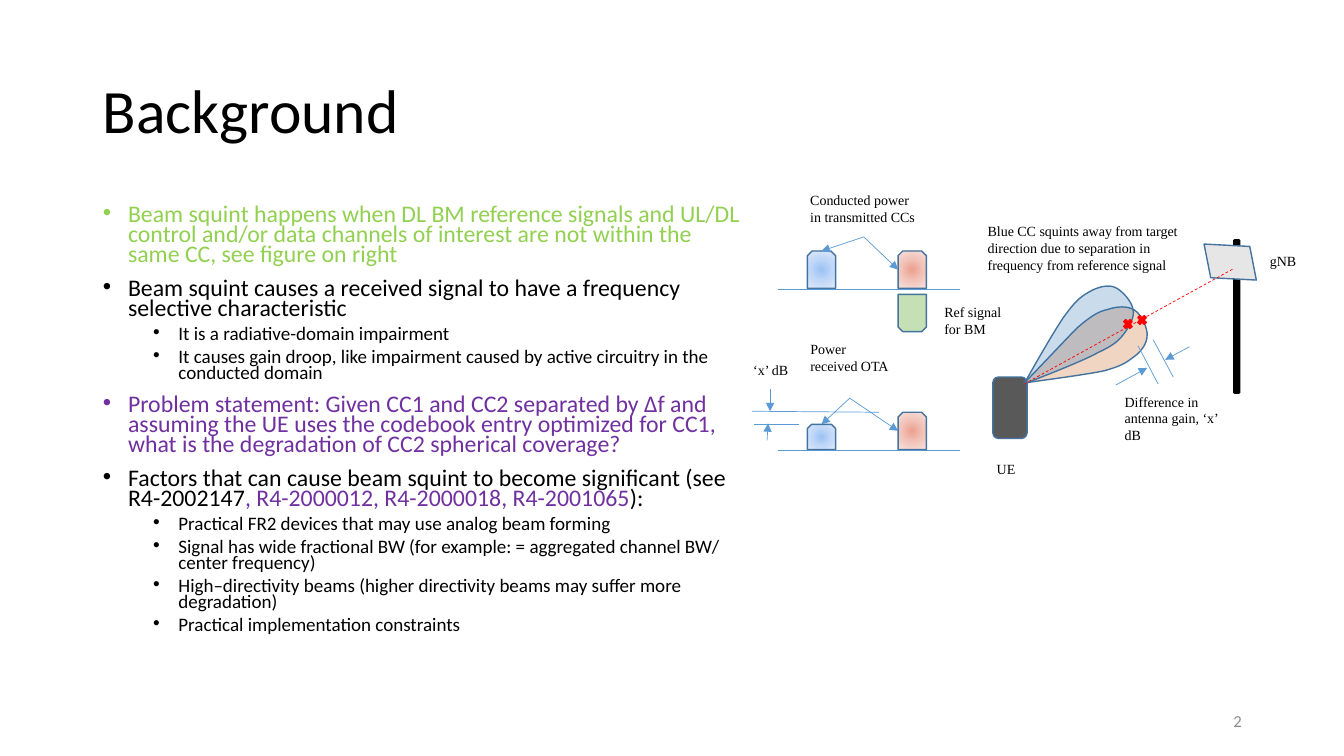
from dataclasses import dataclass

from pptx import Presentation
from pptx import util as u
from pptx.dml.color import RGBColor
from pptx.enum import dml, shapes, text
from pptx.oxml import parse_xml
from pptx.oxml.ns import nsdecls
from pptx.oxml.xmlchemy import OxmlElement

SHAPE = shapes.MSO_SHAPE


@dataclass(frozen=True)
class Theme:
    sans: str = "Calibri"
    serif: str = "Times New Roman"
    black: str = "000000"
    white: str = "FFFFFF"
    grey: str = "8C8C8C"
    green: str = "92D050"
    purple: str = "7030A0"
    red: str = "FF0000"
    outline: str = "43739E"
    guide: str = "5B9BD5"
    device: str = "595959"
    panel: str = "E7E6E6"
    reference: str = "C5E0B4"
    orange_lobe: str = "C55A11"
    blue_lobe: str = "2E75B6"
    blue_carrier: tuple = ("9AC3F5", "C2D8F8", "E1EBFB")
    red_carrier: tuple = ("EDA08E", "F2C5BB", "F8E3DE")
    title_size: float = 44
    body_size: float = 17
    sub_size: float = 13.6
    number_size: float = 12
    label_size: float = 10


THEME = Theme()


def assign(target, values):
    for name, value in values.items():
        setattr(target, name, value)


def add_run(paragraph, words, font, size, color):
    run = paragraph.add_run()
    run.text = words
    assign(run.font, {"name": font, "size": u.Pt(size)})
    run.font.color.rgb = RGBColor.from_string(color)


class SlideBuilder:
    """Draws themed elements on one slide."""

    def __init__(self, slide, theme):
        self.slide, self.theme = slide, theme

    def place(self, shape, box):
        assign(shape, dict(zip(("left", "top", "width", "height"), map(u.Inches, box))))

    def paint(self, shape, fill, line, alpha=None):
        shape.shadow.inherit = False
        if isinstance(fill, tuple):
            stops = "".join(f'<a:gs pos="{50000 * i}"><a:srgbClr val="{color}"/></a:gs>'
                            for i, color in enumerate(fill))
            gradient = parse_xml(
                f'<a:gradFill {nsdecls("a")} rotWithShape="1"><a:gsLst>{stops}</a:gsLst>'
                '<a:path path="circle"><a:fillToRect l="50000" t="50000" r="50000" b="50000"/>'
                '</a:path></a:gradFill>')
            shape._element.spPr.find("{*}prstGeom").addnext(gradient)
        else:
            shape.fill.solid()
            shape.fill.fore_color.rgb = RGBColor.from_string(fill)
        if alpha:
            opacity = OxmlElement("a:alpha")
            opacity.set("val", str(alpha * 1000))
            shape._element.spPr.find("{*}solidFill")[0].append(opacity)
        shape.line.color.rgb = RGBColor.from_string(line)
        shape.line.width = u.Pt(1)

    def title(self, words, box):
        shape = self.slide.shapes.title
        self.place(shape, box)
        assign(shape.text_frame, {"vertical_anchor": text.MSO_ANCHOR.MIDDLE, "word_wrap": True,
                                  "auto_size": text.MSO_AUTO_SIZE.NONE})
        paragraph = shape.text_frame.paragraphs[0]
        assign(paragraph, {"alignment": text.PP_ALIGN.LEFT, "line_spacing": 0.9})
        add_run(paragraph, words, self.theme.sans, self.theme.title_size, self.theme.black)

    def bullets(self, items, box):
        shape = self.slide.placeholders[1]
        self.place(shape, box)
        frame = shape.text_frame
        assign(frame, {"word_wrap": True, "auto_size": text.MSO_AUTO_SIZE.NONE})
        for index, (level, runs) in enumerate(items):
            paragraph = frame.add_paragraph() if index else frame.paragraphs[0]
            assign(paragraph, {"level": level, "line_spacing": 0.7, "space_after": u.Pt(0),
                               "space_before": u.Pt(5 if level else 10)})
            properties = paragraph._p.get_or_add_pPr()
            properties.set("marL", str(u.Inches(0.25 + 0.5 * level)))
            properties.set("indent", str(u.Inches(-0.25)))
            for tag, name, value in (("a:buFont", "typeface", "Arial"), ("a:buChar", "char", "•")):
                bullet = OxmlElement(tag)
                bullet.set(name, value)
                properties.append(bullet)
            size = self.theme.sub_size if level else self.theme.body_size
            for words, color in runs:
                add_run(paragraph, words, self.theme.sans, size, color)

    def text_box(self, words, box, font, size, color, frame_format, paragraph_format):
        shape = self.slide.shapes.add_textbox(*map(u.Inches, box))
        assign(shape.text_frame, {"word_wrap": True, **frame_format})
        paragraph = shape.text_frame.paragraphs[0]
        assign(paragraph, paragraph_format)
        add_run(paragraph, words, font, size, color)
        return shape

    def label(self, words, *box):
        shape = self.text_box(words, box, self.theme.serif, self.theme.label_size,
                              self.theme.black, {}, {"space_after": u.Pt(9)})
        shape.fill.solid()
        shape.fill.fore_color.rgb = RGBColor.from_string(self.theme.white)

    def page_number(self, words, box):
        self.text_box(words, box, self.theme.sans, self.theme.number_size, self.theme.grey,
                      {"vertical_anchor": text.MSO_ANCHOR.MIDDLE},
                      {"alignment": text.PP_ALIGN.RIGHT})

    def shape(self, kind, box, fill, line=None, rotation=0):
        shape = self.slide.shapes.add_shape(kind, *map(u.Inches, box))
        shape.rotation = rotation
        self.paint(shape, fill, line or self.theme.outline)

    def lobe(self, start, curves, fill):
        anchors = [start] + [curve[-1] for curve in curves]
        origin = [min(values) for values in zip(*anchors)]
        builder = self.slide.shapes.build_freeform(
            *(round(value * 1000) for value in start), scale=u.Inches(1) / 1000)
        builder.add_line_segments([(round(x * 1000), round(y * 1000)) for x, y in anchors[1:]])
        shape = builder.convert_to_shape()
        segments = list(shape._element.spPr.iter("{*}lnTo"))
        for segment, curve in zip(segments, curves):
            bend = OxmlElement("a:cubicBezTo")
            for point in curve:
                node = OxmlElement("a:pt")
                for name, value, least in zip("xy", point, origin):
                    node.set(name, str(round((value - least) * 1000)))
                bend.append(node)
            segment.getparent().replace(segment, bend)
        self.paint(shape, fill, self.theme.outline, alpha=25)

    def line(self, start, end, color=None, arrow=False, dash=None):
        line = self.slide.shapes.add_connector(shapes.MSO_CONNECTOR.STRAIGHT,
                                               *map(u.Inches, start + end))
        line.line.color.rgb = RGBColor.from_string(color or self.theme.guide)
        assign(line.line, {"width": u.Pt(0.5), "dash_style": dash})
        if arrow:
            head = OxmlElement("a:tailEnd")
            head.set("type", "triangle")
            line.line._get_or_add_ln().append(head)
        line._element.spPr.append(OxmlElement("a:effectLst"))


def draw_beams(builder):
    theme = builder.theme
    builder.shape(SHAPE.ROUNDED_RECTANGLE, (12.24, 2.38, 0.06, 1.52), theme.black, theme.black)
    builder.shape(SHAPE.PARALLELOGRAM, (11.98, 2.38, 0.45, 0.44), theme.panel, rotation=258.9)
    builder.shape(SHAPE.ROUNDED_RECTANGLE, (9.85, 3.74, 0.34, 0.61), theme.device)
    builder.lobe((10.16, 3.8), [
        ((10.32, 3.64), (10.56, 3.38), (10.69, 3.25)), ((10.83, 3.13), (10.9, 3.09), (10.99, 3.07)),
        ((11.08, 3.04), (11.19, 3.03), (11.26, 3.08)), ((11.32, 3.12), (11.39, 3.26), (11.38, 3.33)),
        ((11.38, 3.41), (11.32, 3.49), (11.25, 3.54)), ((11.17, 3.6), (11.13, 3.63), (10.95, 3.68)),
        ((10.76, 3.72), (10.29, 3.78), (10.16, 3.8))], theme.orange_lobe)
    builder.lobe((10.16, 3.81), [
        ((10.27, 3.61), (10.45, 3.3), (10.55, 3.15)), ((10.66, 3), (10.71, 2.95), (10.8, 2.9)),
        ((10.88, 2.85), (10.99, 2.82), (11.06, 2.85)), ((11.13, 2.88), (11.23, 2.99), (11.24, 3.07)),
        ((11.26, 3.14), (11.21, 3.23), (11.16, 3.3)), ((11.1, 3.38), (11.06, 3.42), (10.89, 3.5)),
        ((10.73, 3.59), (10.28, 3.76), (10.16, 3.81))], theme.blue_lobe)
    builder.line((10.16, 3.81), (12.23, 2.67), theme.red, dash=dml.MSO_LINE.DASH)
    for left, top in ((11.27, 3.11), (11.13, 3.15)):
        builder.shape(SHAPE.MATH_MULTIPLY, (left, top, 0.12, 0.13), theme.red, theme.red)
    builder.line((11.44, 3.37), (11.64, 3.74))
    builder.line((11.29, 3.43), (11.49, 3.81))
    builder.line((11.07, 3.82), (11.38, 3.65), arrow=True)
    builder.line((11.8, 3.44), (11.56, 3.57), arrow=True)
    builder.label("Difference in antenna gain, ‘x’ dB", 11.06, 3.85, 1.13, 0.59)
    builder.label("gNB", 12.5, 2.46, 0.57, 0.48)
    builder.label("UE", 9.79, 4.52, 0.57, 0.32)


def draw_carriers(builder, baseline, blue_height, apex):
    theme, bottom, red_height = builder.theme, baseline - 0.01, 0.37
    builder.line((7.72, baseline), (9.52, baseline))
    for left, height, fill in ((8.01, blue_height, theme.blue_carrier),
                               (8.91, red_height, theme.red_carrier)):
        builder.shape(SHAPE.SNIP_2_SAME_RECTANGLE, (left, bottom - height, 0.28, height), fill)
    builder.line(apex, (8.15, bottom - blue_height), arrow=True)
    builder.line(apex, (8.91, bottom - red_height / 2), arrow=True)


def main():
    presentation = Presentation()
    assign(presentation, {"slide_width": u.Inches(40 / 3), "slide_height": u.Inches(7.5)})
    slide = presentation.slides.add_slide(presentation.slide_layouts[1])
    builder, theme = SlideBuilder(slide, THEME), THEME
    builder.title("Background", (0.92, 0.4, 11.5, 1.45))
    builder.bullets([
        (0, [("Beam squint happens when DL BM reference signals and UL/DL control and/or data "
              "channels of interest are not within the same CC, see figure on right", theme.green)]),
        (0, [("Beam squint causes a received signal to have a frequency selective characteristic",
              theme.black)]),
        (1, [("It is a radiative-domain impairment", theme.black)]),
        (1, [("It causes gain droop, like impairment caused by active circuitry in the conducted "
              "domain", theme.black)]),
        (0, [("Problem statement: Given CC1 and CC2 separated by ∆f and assuming the UE uses the "
              "codebook entry optimized for CC1, what is the degradation of CC2 spherical "
              "coverage?", theme.purple)]),
        (0, [("Factors that can cause beam squint to become significant (see R4-2002147",
              theme.black), (", R4-2000012, R4-2000018, R4-2001065", theme.purple),
             ("):", theme.black)]),
        (1, [("Practical FR2 devices that may use analog beam forming", theme.black)]),
        (1, [("Signal has wide fractional BW (for example: = aggregated channel BW/ center "
              "frequency)", theme.black)]),
        (1, [("High–directivity beams (higher directivity beams may suffer more degradation)",
              theme.black)]),
        (1, [("Practical implementation constraints", theme.black)]),
    ], (0.92, 2, 6.54, 4.76))
    builder.page_number("2", (9.42, 6.95, 3, 0.4))
    draw_beams(builder)
    builder.label("Conducted power in transmitted CCs", 7.94, 1.85, 1.26, 0.49)
    builder.label("Ref signal for BM", 9.27, 2.96, 0.79, 0.42)
    builder.label("Blue CC squints away from target direction due to separation in frequency "
                  "from reference signal", 9.7, 2.16, 2.17, 0.67)
    builder.label("Power received OTA", 7.94, 3.33, 0.98, 0.62)
    builder.label(" ‘x’ dB", 7.34, 3.54, 0.67, 0.27)
    draw_carriers(builder, 2.87, 0.37, (8.57, 2.35))
    builder.shape(SHAPE.SNIP_2_SAME_RECTANGLE, (8.91, 2.92, 0.28, 0.37), theme.reference,
                  rotation=180)
    draw_carriers(builder, 4.47, 0.25, (8.43, 3.95))
    builder.line((7.48, 4.21), (7.93, 4.21))
    builder.line((7.46, 4.08), (8.72, 4.09))
    builder.line((7.61, 4.37), (7.62, 4.2), arrow=True)
    builder.line((7.64, 3.86), (7.64, 4.08), arrow=True)
    presentation.save("out.pptx")


if __name__ == "__main__":
    main()
